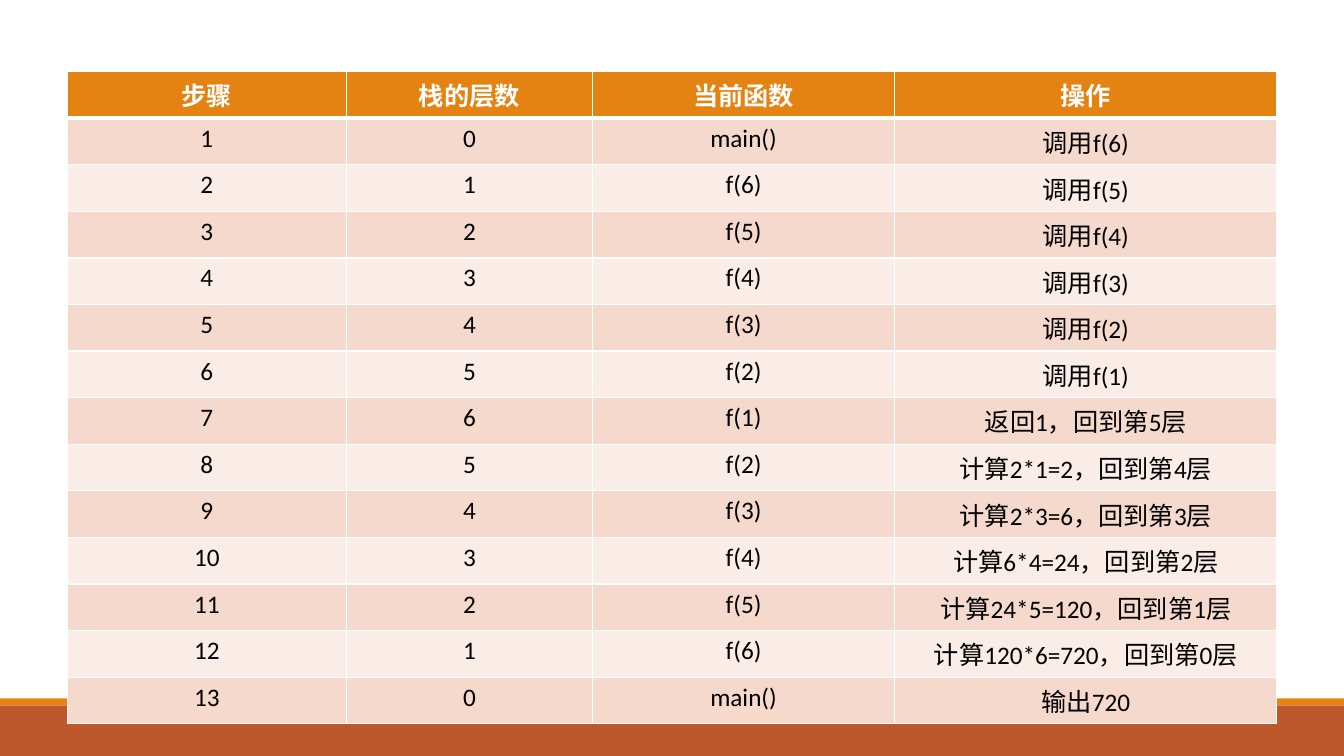
from lxml.etree import SubElement
from pptx import Presentation
from pptx.dml.color import RGBColor
from pptx.enum.shapes import MSO_SHAPE as Shape
from pptx.enum.text import PP_ALIGN as Align
from pptx.oxml.ns import qn
from pptx.util import Inches, Pt

ORANGE = RGBColor(0xE4, 0x83, 0x12)
RUST = RGBColor(0xBD, 0x58, 0x2C)
PINK = RGBColor(0xF5, 0xD9, 0xCC)
PALE = RGBColor(0xFA, 0xED, 0xE7)
WHITE = RGBColor(0xFF, 0xFF, 0xFF)
BLACK = RGBColor(0, 0, 0)

WIDTH, HEIGHT = Inches(13.33), Inches(7.5)
FONT, SIZE = "Calibri", Pt(18)
COLS = (2.77, 2.44, 3, 3.79)
ROW = 0.42
HEADS = ("步骤", "栈的层数", "当前函数", "操作")
TOP = 6  # deepest level of the call stack
PRODUCTS = ("2*1=2", "2*3=6", "6*4=24", "24*5=120", "120*6=720")


def trace():
    """Return the rows of the table: step, stack depth, function, action."""
    acts = [f"调用f({n})" for n in range(TOP, 0, -1)]
    acts.append(f"返回1，回到第{TOP - 1}层")
    for back, product in enumerate(PRODUCTS, 2):
        acts.append(f"计算{product}，回到第{TOP - back}层")
    acts.append("输出720")
    rows = []
    for i, act in enumerate(acts):
        depth = min(i, 2 * TOP - i)
        name = f"f({TOP + 1 - depth})" if depth else "main()"
        rows.append((str(i + 1), str(depth), name, act))
    return rows


def add_band(slide, top, height, color):
    band = slide.shapes.add_shape(Shape.RECTANGLE, 0, top, WIDTH, height)
    band.shadow.inherit = False
    band.fill.solid()
    band.fill.fore_color.rgb = color
    band.line.fill.background()


def add_footer(slide, top, height):
    """Draw a thin orange strip above a rust bar."""
    strip = int(height * 0.12)
    add_band(slide, top + strip, height - strip, RUST)
    add_band(slide, top, strip, ORANGE)


def set_edges(cell, top, bottom):
    """Give the cell white borders, with top and bottom widths in points."""
    props = cell._tc.get_or_add_tcPr()
    for tag, width in (("lnL", 1), ("lnR", 1), ("lnT", top), ("lnB", bottom)):
        edge = SubElement(props, qn(f"a:{tag}"), w=str(Pt(width)))
        fill = SubElement(edge, qn("a:solidFill"))
        SubElement(fill, qn("a:srgbClr"), val=str(WHITE))


def fill_cell(cell, text, row):
    head = row == 0
    set_edges(cell, 3 if row == 1 else 1, 3 if head else 1)
    cell.fill.solid()
    cell.fill.fore_color.rgb = ORANGE if head else (PALE, PINK)[row % 2]
    cell.text_frame.text = text
    para = cell.text_frame.paragraphs[0]
    para.alignment = Align.CENTER
    font = para.runs[0].font
    font.name, font.size, font.bold = FONT, SIZE, head
    font.color.rgb = WHITE if head else BLACK


def add_trace(slide, left, top, width):
    rows = [HEADS, *trace()]
    height = Inches(ROW * len(rows))
    frame = slide.shapes.add_table(len(rows), len(COLS), left, top, width, height)
    table = frame.table
    for col, share in zip(table.columns, COLS):
        col.width = int(width * share / sum(COLS))
    for r, texts in enumerate(rows):
        table.rows[r].height = Inches(ROW)
        for c, text in enumerate(texts):
            fill_cell(table.cell(r, c), text, r)


def main():
    deck = Presentation()
    deck.slide_width, deck.slide_height = WIDTH, HEIGHT
    slide = deck.slides.add_slide(deck.slide_layouts[6])
    foot = Inches(0.57)
    add_footer(slide, HEIGHT - foot, foot)
    add_trace(slide, int(WIDTH * 0.05), Inches(0.71), int(WIDTH * 0.9))
    deck.save("out.pptx")


if __name__ == "__main__":
    main()
